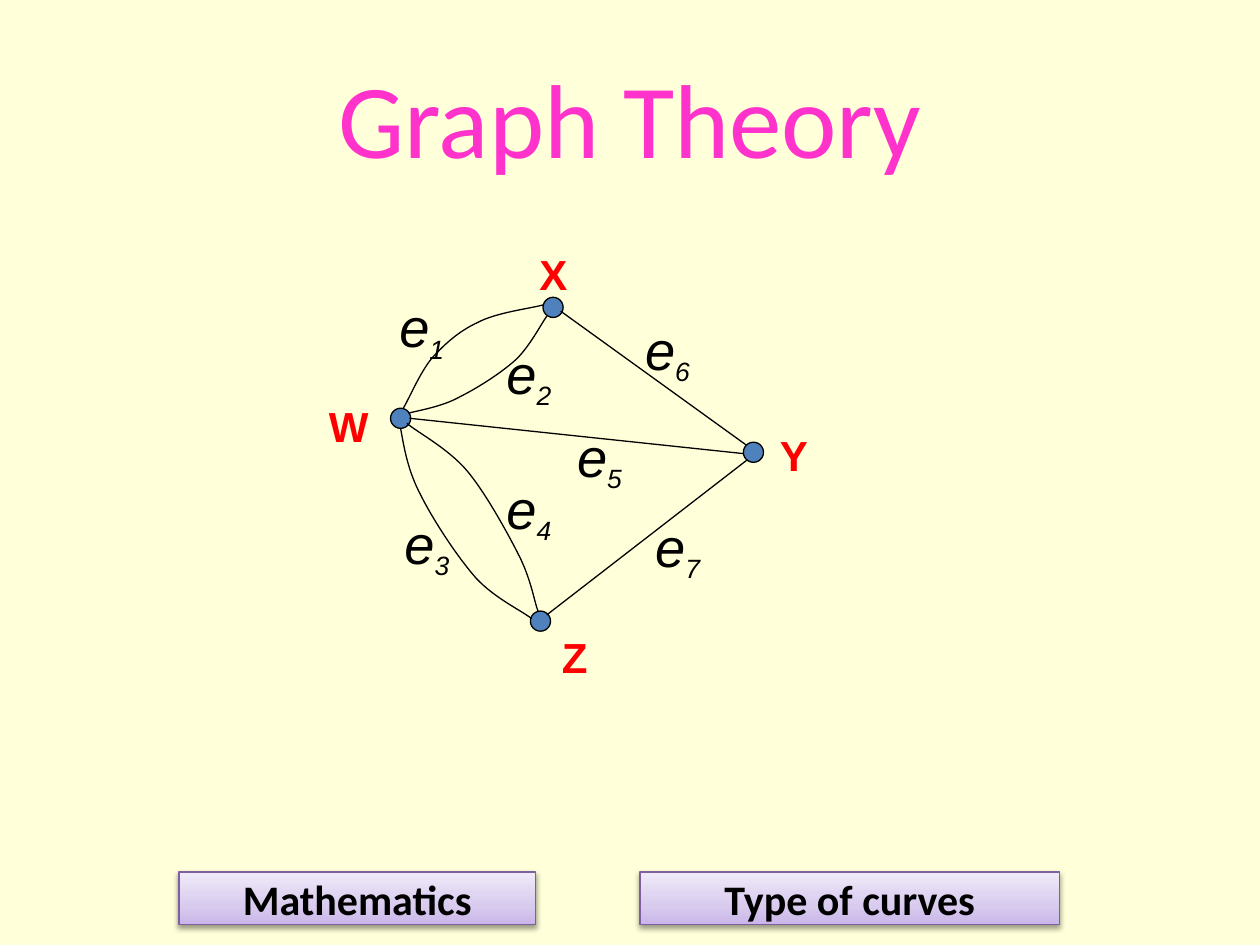
from lxml.etree import SubElement
from pptx import Presentation
from pptx.dml.color import RGBColor
from pptx.enum.shapes import MSO_CONNECTOR, MSO_SHAPE
from pptx.enum.text import MSO_ANCHOR, PP_ALIGN
from pptx.oxml.ns import qn
from pptx.util import Inches, Pt

TITLE = "Graph Theory"
BUTTONS = [("Mathematics", 1.42, 2.83), ("Type of curves", 5.08, 3.33)]
BUTTON_STOPS = [(0, "C9B5E8"), (35, "D8CBEE"), (100, "F0EAF9")]
NODES = [(4.31, 2.36), (3.10, 3.24), (5.90, 3.51), (4.21, 4.85)]
NODE_SIZE = 0.16
STRAIGHT_EDGES = [
    ((3.25, 3.32), (5.90, 3.60)),
    ((4.34, 4.88), (5.93, 3.65)),
    ((4.45, 2.47), (5.92, 3.53)),
]
CURVED_EDGES = [
    [(3.23, 3.36), (3.31, 3.43), (3.56, 3.56), (3.71, 3.74), (3.86, 3.92),
     (4.04, 4.25), (4.13, 4.43), (4.22, 4.62), (4.24, 4.77), (4.27, 4.85)],
    [(3.18, 3.40), (3.21, 3.57), (3.24, 3.74), (3.34, 3.93), (3.44, 4.13),
     (3.63, 4.42), (3.78, 4.59), (3.93, 4.75), (4.13, 4.84), (4.22, 4.91)],
    [(3.20, 3.24), (3.24, 3.18), (3.33, 2.96), (3.43, 2.84), (3.53, 2.73),
     (3.64, 2.63), (3.79, 2.56), (3.94, 2.48), (4.20, 2.45), (4.31, 2.42)],
    [(3.24, 3.28), (3.31, 3.26), (3.51, 3.23), (3.65, 3.15), (3.79, 3.08),
     (3.98, 2.96), (4.10, 2.85), (4.21, 2.74), (4.29, 2.58), (4.34, 2.51)],
]
EDGE_LABELS = [
    ("1", 3.06, 2.23), ("2", 3.91, 2.60), ("3", 3.10, 3.95), ("4", 3.91, 3.67),
    ("6", 5.01, 2.41), ("5", 4.47, 3.26), ("7", 5.09, 3.97),
]
NODE_LABELS = [("Z", 4.35, 4.91), ("Y", 6.08, 3.31), ("X", 4.17, 1.87), ("W", 2.50, 3.08)]


def color(hex_value):
    return RGBColor.from_string(hex_value)


def box(left, top, width, height):
    return [Inches(value) for value in (left, top, width, height)]


def add_run(paragraph, text, size, font_name, hex_value, bold=False, italic=False):
    run = paragraph.add_run()
    run.text = text
    font = run.font
    font.size, font.name, font.bold, font.italic = Pt(size), font_name, bold, italic
    font.color.rgb = color(hex_value)
    return run


def set_line(shape, hex_value="000000"):
    shape.line.color.rgb = color(hex_value)
    shape.line.width = Pt(0.75)


def add_button(slide, text, left, width):
    button = slide.shapes.add_shape(MSO_SHAPE.RECTANGLE, *box(left, 6.92, width, 0.42))
    button.fill.gradient()
    button.fill.gradient_angle = 90
    stops = button._element.spPr.find(".//" + qn("a:gsLst"))
    for stop in list(stops):
        stops.remove(stop)
    for position, hex_value in BUTTON_STOPS:
        stop = SubElement(stops, qn("a:gs"), pos=str(position * 1000))
        SubElement(stop, qn("a:srgbClr"), val=hex_value)
    set_line(button, "7D60A0")
    button.shadow.inherit = False
    effects = button._element.spPr.find(qn("a:effectLst"))
    shadow = SubElement(effects, qn("a:outerShdw"), blurRad=str(Pt(3.1)),
                        dist=str(Pt(1.6)), dir="5400000", rotWithShape="0")
    shadow_color = SubElement(shadow, qn("a:srgbClr"), val="000000")
    SubElement(shadow_color, qn("a:alpha"), val="38000")
    frame = button.text_frame
    frame.vertical_anchor = MSO_ANCHOR.MIDDLE
    paragraph = frame.paragraphs[0]
    paragraph.alignment = PP_ALIGN.CENTER
    add_run(paragraph, text, 24, "Calibri", "000000", bold=True)


def add_node(slide, left, top):
    node = slide.shapes.add_shape(MSO_SHAPE.OVAL, *box(left, top, NODE_SIZE, NODE_SIZE))
    node.fill.solid()
    node.fill.fore_color.rgb = color("4F81BD")
    set_line(node)
    node.shadow.inherit = False


def add_straight_edge(slide, start, end):
    edge = slide.shapes.add_connector(MSO_CONNECTOR.STRAIGHT, *box(*start, *end))
    set_line(edge)
    SubElement(edge._element.spPr, qn("a:effectLst"))


def add_curved_edge(slide, points):
    """Draw a chain of cubic curves, three points for each after the first."""
    scaled = [(Inches(x), Inches(y)) for x, y in points]
    builder = slide.shapes.build_freeform(*scaled[0])
    builder.add_line_segments(scaled[1:], close=False)
    edge = builder.convert_to_shape()
    outline = edge._element.spPr.find(".//" + qn("a:path"))
    segments = outline.findall(qn("a:lnTo"))
    for index in range(0, len(segments), 3):
        curve = SubElement(outline, qn("a:cubicBezTo"))
        for segment in segments[index:index + 3]:
            curve.append(segment[0])
            outline.remove(segment)
    edge.fill.background()
    set_line(edge)
    edge.shadow.inherit = False


def add_label(slide, left, top, width, height):
    frame = slide.shapes.add_textbox(*box(left, top, width, height)).text_frame
    frame.word_wrap = True
    frame.margin_left = frame.margin_right = Inches(0.11)
    frame.margin_top, frame.margin_bottom = Inches(0.1), Inches(0.02)
    return frame.paragraphs[0]


def main():
    presentation = Presentation()
    presentation.slide_width, presentation.slide_height = Inches(10), Inches(7.5)
    slide = presentation.slides.add_slide(presentation.slide_layouts[5])
    slide.background.fill.solid()
    slide.background.fill.fore_color.rgb = color("FFFFD9")

    title = slide.shapes.title
    title.left, title.top, title.width, title.height = box(0.5, 0.3, 9, 1.25)
    paragraph = title.text_frame.paragraphs[0]
    paragraph.alignment = PP_ALIGN.CENTER
    add_run(paragraph, TITLE, 60, "Calibri", "FF33CC")

    for button in BUTTONS:
        add_button(slide, *button)
    for node in NODES:
        add_node(slide, *node)
    for edge in STRAIGHT_EDGES:
        add_straight_edge(slide, *edge)
    for number, left, top in EDGE_LABELS:
        paragraph = add_label(slide, left, top, 0.76, 0.63)
        add_run(paragraph, "e", 31, "Arial", "000000", italic=True)
        subscript = add_run(paragraph, number, 26, "Arial", "000000", italic=True)
        subscript.font._element.set("baseline", "-25000")
    for points in CURVED_EDGES:
        add_curved_edge(slide, points)
    for name, left, top in NODE_LABELS:
        paragraph = add_label(slide, left, top, 0.62, 0.51)
        add_run(paragraph, name, 24, "Arial", "FF0000", bold=True)

    presentation.save("out.pptx")


if __name__ == "__main__":
    main()
